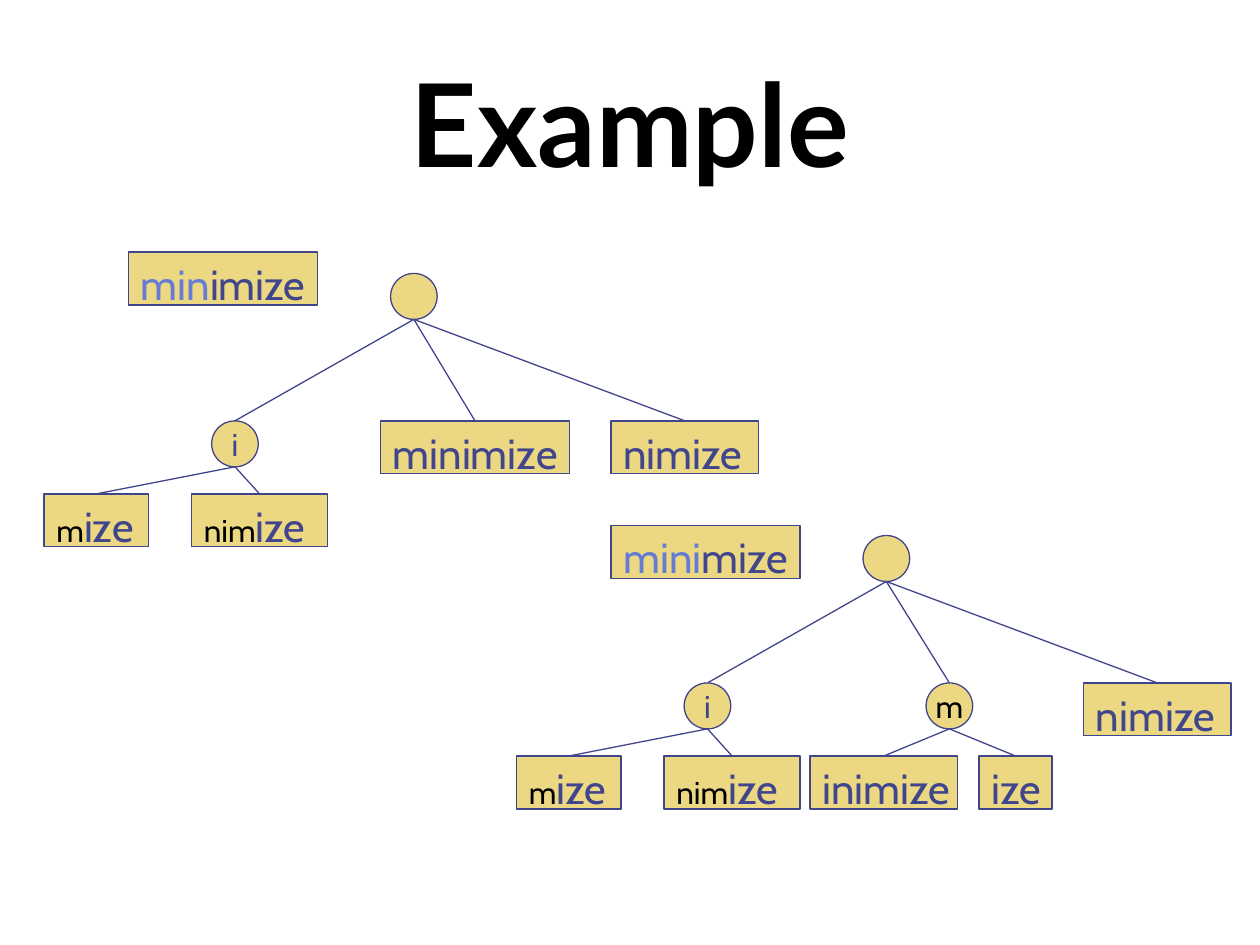
from pptx import Presentation
from pptx import util as u
from pptx.dml.color import RGBColor
from pptx.enum import shapes, text
from pptx.oxml.ns import qn
from lxml import etree

COLORS = {"gold": "ECD882", "navy": "40458C", "blue": "657BD4", "black": "000000"}
BOX_H = 0.42
NODE_W, NODE_H = 0.37, 0.365
TREE_DX, TREE_DY = 3.75, 2.08
ROOT_Y, CHILD_Y, LEAF_Y = 2.17, 3.34, 3.92


def color(name):
    return RGBColor.from_string(COLORS[name])


def add_runs(tf, runs):
    p = tf.paragraphs[0]
    for words, size, tone in runs:
        r = p.add_run()
        r.text = words
        r.font.name = "Cabin"
        r.font.size = u.Pt(size)
        r.font.color.rgb = color(tone)
    return p


def add_shape(parent, kind, x, y, w, h):
    sp = parent.add_shape(kind, u.Inches(x), u.Inches(y), u.Inches(w), u.Inches(h))
    sp.shadow.inherit = False
    sp.fill.solid()
    sp.fill.fore_color.rgb = color("gold")
    sp.line.color.rgb = color("navy")
    sp.line.width = u.Pt(0.75)
    sp.text_frame.word_wrap = False
    return sp


def add_box(parent, x, y, w, *runs):
    sp = add_shape(parent, shapes.MSO_SHAPE.RECTANGLE, x, y, w, BOX_H)
    sp.text_frame.vertical_anchor = text.MSO_ANCHOR.TOP
    add_runs(sp.text_frame, runs).alignment = text.PP_ALIGN.LEFT
    return sp


def add_node(parent, x, y, *runs):
    sp = add_shape(parent, shapes.MSO_SHAPE.OVAL, x, y, NODE_W, NODE_H)
    sp.text_frame.vertical_anchor = text.MSO_ANCHOR.MIDDLE
    add_runs(sp.text_frame, runs).alignment = text.PP_ALIGN.CENTER
    return sp


def add_edges(parent, node, children):
    for child in children:
        cx = parent.add_connector(
            shapes.MSO_CONNECTOR.STRAIGHT,
            node.left + node.width // 2, node.top + node.height,
            child.left + child.width // 2, child.top)
        if child.auto_shape_type == shapes.MSO_SHAPE.RECTANGLE:
            cx.end_connect(child, 0)
        cx.line.color.rgb = color("navy")
        cx.line.width = u.Pt(0.75)
        etree.SubElement(cx._element.spPr, qn("a:effectLst"))


def add_tree(s, dx, dy, add_middle):
    tree = s.shapes.add_group_shape().shapes
    root = add_node(tree, dx + 3.1, dy + ROOT_Y)
    i_node = add_node(tree, dx + 1.68, dy + CHILD_Y, ("i", 18, "navy"))
    nimize = add_box(tree, dx + 4.85, dy + CHILD_Y, 1.17, ("nimize", 24, "navy"))
    i_leaves = [
        add_box(tree, dx + x, dy + LEAF_Y, w, (label, 18, "black"), ("ize", 24, "navy"))
        for x, w, label in ((0.35, 0.83, "m"), (1.52, 1.08, "nim"))]
    middle = add_middle(tree, dx, dy)
    add_edges(tree, root, [i_node, middle, nimize])
    add_edges(tree, i_node, i_leaves)


def add_minimize_leaf(tree, dx, dy):
    return add_box(tree, dx + 3.02, dy + CHILD_Y, 1.5, ("minimize", 24, "navy"))


def add_m_branch(tree, dx, dy):
    m_node = add_node(tree, dx + 3.6, dy + CHILD_Y, ("m", 18, "black"))
    leaves = [add_box(tree, dx + x, dy + LEAF_Y, w, (label, 24, "navy"))
              for x, w, label in ((2.68, 1.17, "inimize"), (4.02, 0.58, "ize"))]
    add_edges(tree, m_node, leaves)
    return m_node


def add_title(s, words):
    sp = s.shapes.add_textbox(u.Inches(0.5), u.Inches(0.34), u.Inches(9), u.Inches(1.25))
    tf = sp.text_frame
    tf.word_wrap = True
    tf.vertical_anchor = text.MSO_ANCHOR.MIDDLE
    tf.text = words
    p = tf.paragraphs[0]
    p.alignment = text.PP_ALIGN.CENTER
    font = p.runs[0].font
    font.name, font.size, font.bold = "Lato", u.Pt(66), True
    font.color.rgb = color("black")


def main():
    prs = Presentation()
    prs.slide_width, prs.slide_height = u.Inches(10), u.Inches(7.5)
    s = prs.slides.add_slide(prs.slide_layouts[6])
    add_title(s, "Example")
    add_box(s.shapes, 1.02, 2, 1.5, ("min", 24, "blue"), ("imize", 24, "navy"))
    add_tree(s, 0, 0, add_minimize_leaf)
    add_box(s.shapes, 4.85, 4.17, 1.5, ("mini", 24, "blue"), ("mize", 24, "navy"))
    add_tree(s, TREE_DX, TREE_DY, add_m_branch)
    prs.save("out.pptx")


if __name__ == "__main__":
    main()
